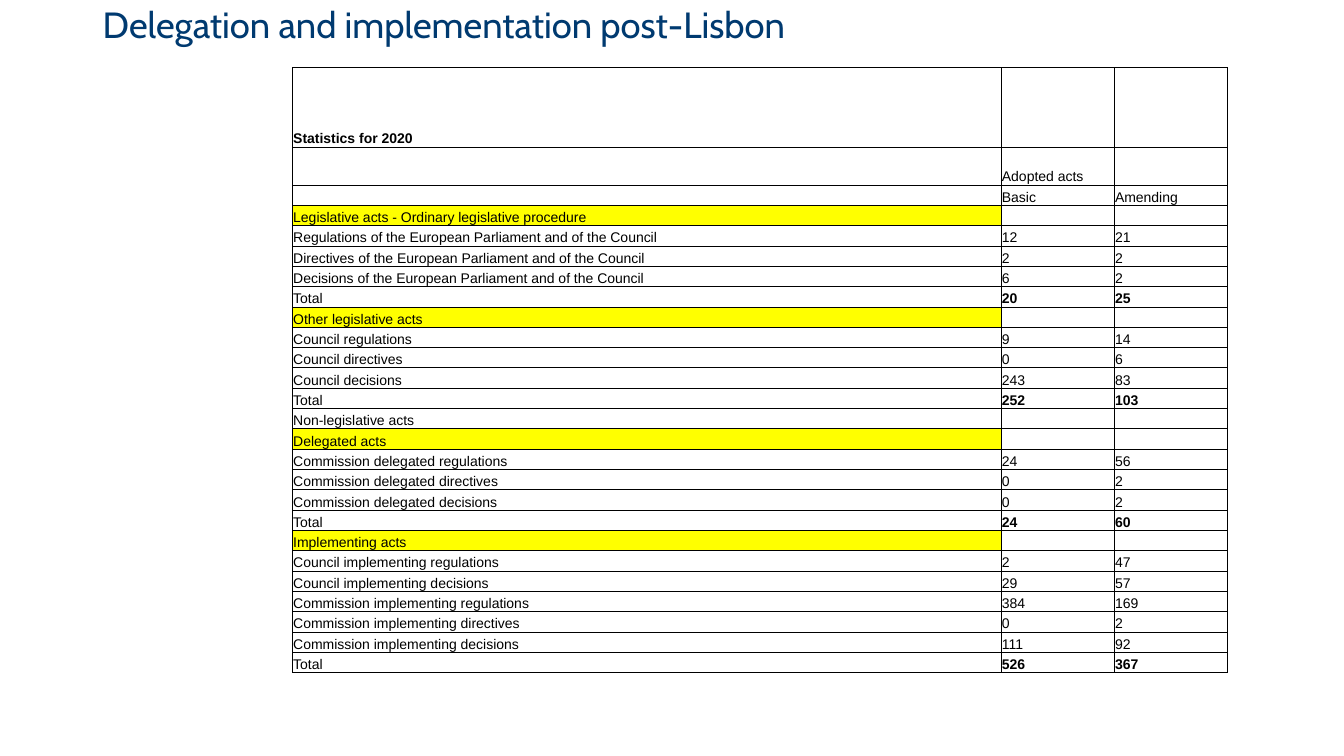
"""Build a slide with a table of acts adopted in 2020."""
from lxml.etree import SubElement
from pptx import Presentation
from pptx.dml.color import RGBColor
from pptx.enum.text import MSO_ANCHOR
from pptx.oxml.ns import qn
from pptx.util import Cm, Pt

HEADS = {
    "Legislative acts - Ordinary legislative procedure",
    "Other legislative acts",
    "Delegated acts",
    "Implementing acts",
}
ACTS = [
    ("Statistics for 2020", "", ""),
    ("", "Adopted acts", ""),
    ("", "Basic", "Amending"),
    ("Legislative acts - Ordinary legislative procedure", "", ""),
    ("Regulations of the European Parliament and of the Council", 12, 21),
    ("Directives of the European Parliament and of the Council", 2, 2),
    ("Decisions of the European Parliament and of the Council", 6, 2),
    ("Total", 20, 25),
    ("Other legislative acts", "", ""),
    ("Council regulations", 9, 14),
    ("Council directives", 0, 6),
    ("Council decisions", 243, 83),
    ("Total", 252, 103),
    ("Non-legislative acts", "", ""),
    ("Delegated acts", "", ""),
    ("Commission delegated regulations", 24, 56),
    ("Commission delegated directives", 0, 2),
    ("Commission delegated decisions", 0, 2),
    ("Total", 24, 60),
    ("Implementing acts", "", ""),
    ("Council implementing regulations", 2, 47),
    ("Council implementing decisions", 29, 57),
    ("Commission implementing regulations", 384, 169),
    ("Commission implementing directives", 0, 2),
    ("Commission implementing decisions", 111, 92),
    ("Total", 526, 367),
]


def color(code):
    return RGBColor.from_string(code)


class Page:
    navy, black, yellow = "003A70", "000000", "FFFF00"
    head_font, body_font = "Cabin", "Arial"

    def __init__(self, slide):
        self.slide = slide

    def style(self, para, name, size, code, bold=False):
        font = para.font
        font.name, font.size, font.bold = name, Pt(size), bold
        font.color.rgb = color(code)

    def title(self, text, left, top, width, height):
        box = self.slide.shapes.add_textbox(Cm(left), Cm(top), Cm(width), Cm(height))
        frame = box.text_frame
        frame.word_wrap = True
        para = frame.paragraphs[0]
        para.text = text
        para.line_spacing = 0.9
        self.style(para, self.head_font, 26, self.navy)

    def border(self, cell):
        props = cell._tc.get_or_add_tcPr()
        for side in ("lnL", "lnR", "lnT", "lnB"):
            line = SubElement(props, qn(f"a:{side}"), w=str(Pt(0.5)))
            fill = SubElement(line, qn("a:solidFill"))
            SubElement(fill, qn("a:srgbClr"), val=self.black)

    def cell(self, cell, text, bold, fill):
        self.border(cell)
        if fill:
            cell.fill.solid()
            cell.fill.fore_color.rgb = color(fill)
        else:
            cell.fill.background()
        cell.vertical_anchor = MSO_ANCHOR.BOTTOM
        cell.margin_left = cell.margin_right = cell.margin_top = Cm(0.02)
        cell.margin_bottom = 0
        para = cell.text_frame.paragraphs[0]
        if text:
            para.text = text
        else:
            para._p.get_or_add_endParaRPr().set("sz", "1000")
        self.style(para, self.body_font, 10, self.black, bold)

    def table(self, rows, left, top, widths, heights):
        frame = self.slide.shapes.add_table(
            len(rows), len(widths), Cm(left), Cm(top),
            Cm(sum(widths)), Cm(sum(heights)))
        table = frame.table
        table.first_row = table.horz_banding = False
        for col, width in zip(table.columns, widths):
            col.width = Cm(width)
        for row, height, texts in zip(table.rows, heights, rows):
            row.height = Cm(height)
            label = texts[0]
            for col, (cell, text) in enumerate(zip(row.cells, texts)):
                bold = label == "Statistics for 2020" or (label == "Total" and col > 0)
                fill = self.yellow if col == 0 and label in HEADS else None
                self.cell(cell, str(text), bold, fill)


def main():
    deck = Presentation()
    deck.slide_width, deck.slide_height = Cm(33.87), Cm(19.05)
    page = Page(deck.slides.add_slide(deck.slide_layouts[6]))
    page.title("Delegation and implementation post-Lisbon", 2.34, 0.05, 29.21, 3.68)
    tall = [2, 0.96]
    count = len(ACTS) - len(tall)
    even = (15.27 - sum(tall)) / count
    page.table(ACTS, 7.37, 1.7, [17.86, 2.85, 2.85], tall + [even] * count)
    deck.save("out.pptx")


if __name__ == "__main__":
    main()
